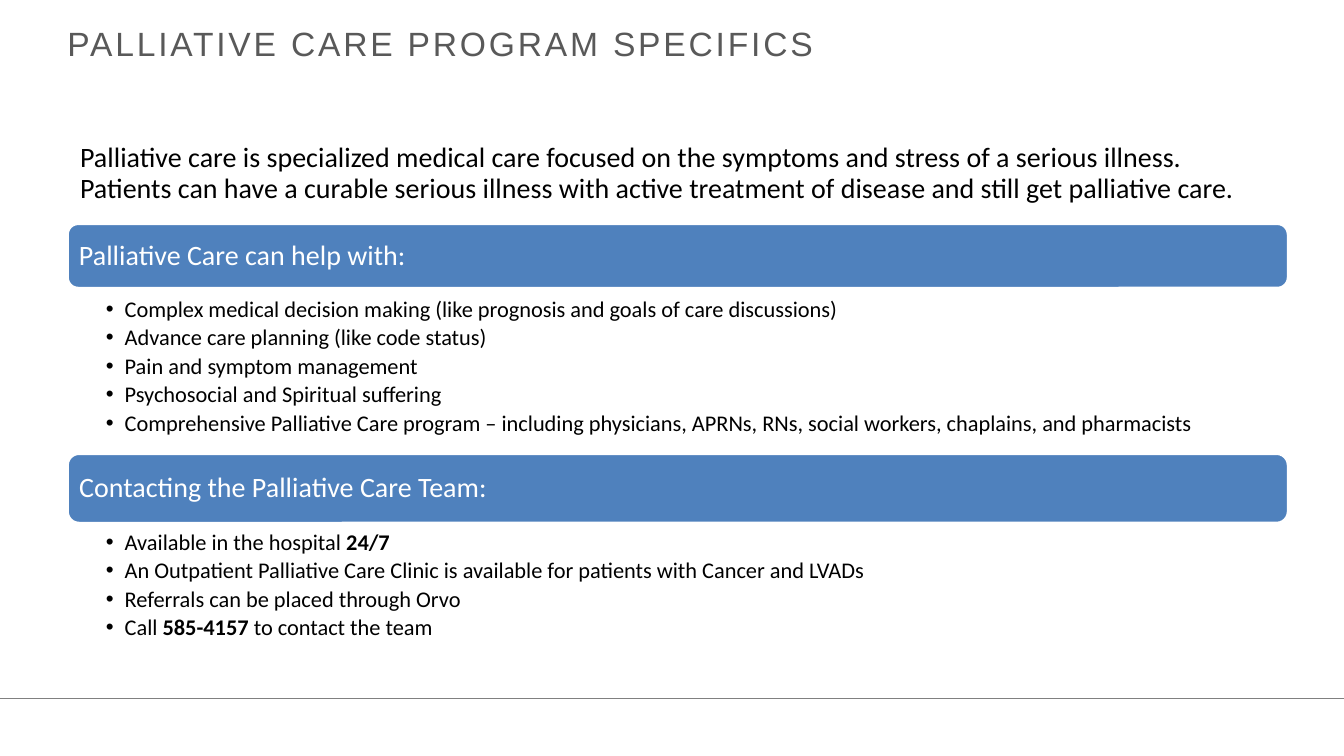
from lxml.etree import SubElement
from pptx import Presentation
from pptx.dml.color import RGBColor
from pptx.enum.shapes import MSO_CONNECTOR, MSO_SHAPE
from pptx.enum.text import MSO_ANCHOR, PP_ALIGN
from pptx.oxml.ns import qn
from pptx.util import Pt

WHITE = RGBColor(0xFF, 0xFF, 0xFF)
BLACK = RGBColor(0x00, 0x00, 0x00)
BLUE = RGBColor(0x4F, 0x81, 0xBD)
TITLE_GRAY = RGBColor(0x59, 0x59, 0x59)
RULE_GRAY = RGBColor(0x80, 0x80, 0x80)

TITLE = "PALLIATIVE CARE PROGRAM SPECIFICS"
INTRO = (
    "Palliative care is specialized medical care focused on the symptoms and stress of a serious illness.\v"
    "Patients can have a curable serious illness with active treatment of disease and still get palliative care."
)
HELP_TOPICS = [
    ["Complex medical decision making (like prognosis and goals of care discussions)"],
    ["Advance care planning (like code status)"],
    ["Pain and symptom management"],
    ["Psychosocial and Spiritual suffering"],
    ["Comprehensive Palliative Care program – including physicians, APRNs, RNs, "
     "social workers, chaplains, and pharmacists"],
]
CONTACT_FACTS = [
    ["Available in the hospital ", "24/7"],
    ["An Outpatient Palliative Care Clinic is available for patients with Cancer and LVADs"],
    ["Referrals can be placed through Orvo"],
    ["Call ", "585-4157", " to contact the team"],
]
BANNERS = [
    (INTRO, 92.9, 62.6, WHITE, BLACK),
    ("Palliative Care can help with:", 159.8, 46.1, BLUE, WHITE),
    ("Contacting the Palliative Care Team:", 324, 49.7, BLUE, WHITE),
]
BULLET_LISTS = [(HELP_TOPICS, 211, 118), (CONTACT_FACTS, 377.3, 86.4)]

SLIDE_WIDTH, SLIDE_HEIGHT = 960, 540
LEFT, CONTENT_WIDTH = 48.2, 872
RULE_TOP = 499
INDENT = 13.5


def set_frame(frame, anchor, left, top, right, bottom):
    formats = {
        "word_wrap": True,
        "vertical_anchor": anchor,
        "margin_left": Pt(left),
        "margin_top": Pt(top),
        "margin_right": Pt(right),
        "margin_bottom": Pt(bottom),
    }
    for name, value in formats.items():
        setattr(frame, name, value)


def set_font(font, color, **formats):
    for name, value in formats.items():
        setattr(font, name, value)
    font.color.rgb = color


def add_title(slide):
    box = slide.shapes.add_textbox(Pt(LEFT), Pt(14.4), Pt(864), Pt(33.1))
    set_frame(box.text_frame, MSO_ANCHOR.MIDDLE, 0, 0, 0, 0)
    run = box.text_frame.paragraphs[0].add_run()
    run.text = TITLE
    set_font(run.font, TITLE_GRAY, name="Arial", size=Pt(24))
    run.font._element.set("spc", "200")


def add_rule(slide):
    rule = slide.shapes.add_connector(
        MSO_CONNECTOR.STRAIGHT, Pt(0), Pt(RULE_TOP), Pt(SLIDE_WIDTH), Pt(RULE_TOP)
    )
    rule.line.color.rgb = RULE_GRAY
    rule.line.width = Pt(1)
    SubElement(rule._element.spPr, qn("a:effectLst"))


def add_banner(slide, text, top, height, fill, color):
    banner = slide.shapes.add_shape(
        MSO_SHAPE.ROUNDED_RECTANGLE, Pt(LEFT), Pt(top), Pt(CONTENT_WIDTH), Pt(height)
    )
    banner.shadow.inherit = False
    banner.fill.solid()
    banner.fill.fore_color.rgb = fill
    banner.line.color.rgb = WHITE
    banner.line.width = Pt(2)
    set_frame(banner.text_frame, MSO_ANCHOR.MIDDLE, 6, 6, 6, 6)
    paragraph = banner.text_frame.paragraphs[0]
    paragraph.text = text
    paragraph.alignment = PP_ALIGN.LEFT
    paragraph.line_spacing = 0.9
    set_font(paragraph.font, color, name="Calibri", size=Pt(20))


def add_bullet_list(slide, items, top, height):
    box = slide.shapes.add_textbox(Pt(LEFT), Pt(top), Pt(CONTENT_WIDTH), Pt(height))
    frame = box.text_frame
    set_frame(frame, MSO_ANCHOR.TOP, 27.4, 2, 11.5, 2)
    for index, pieces in enumerate(items):
        paragraph = frame.add_paragraph() if index else frame.paragraphs[0]
        paragraph.level = 1
        paragraph.line_spacing = 0.9
        paragraph.space_after = Pt(3)
        properties = paragraph._p.get_or_add_pPr()
        properties.set("marL", str(Pt(INDENT)))
        properties.set("indent", str(-Pt(INDENT)))
        SubElement(properties, qn("a:buFont"), typeface="Arial")
        SubElement(properties, qn("a:buChar"), char="•")
        for position, piece in enumerate(pieces):
            run = paragraph.add_run()
            run.text = piece
            set_font(run.font, BLACK, name="Calibri", size=Pt(16), bold=position == 1)


def main():
    presentation = Presentation()
    presentation.slide_width = Pt(SLIDE_WIDTH)
    presentation.slide_height = Pt(SLIDE_HEIGHT)
    slide = presentation.slides.add_slide(presentation.slide_layouts[6])
    add_rule(slide)
    add_title(slide)
    for banner in BANNERS:
        add_banner(slide, *banner)
    for bullet_list in BULLET_LISTS:
        add_bullet_list(slide, *bullet_list)
    presentation.save("out.pptx")


if __name__ == "__main__":
    main()
